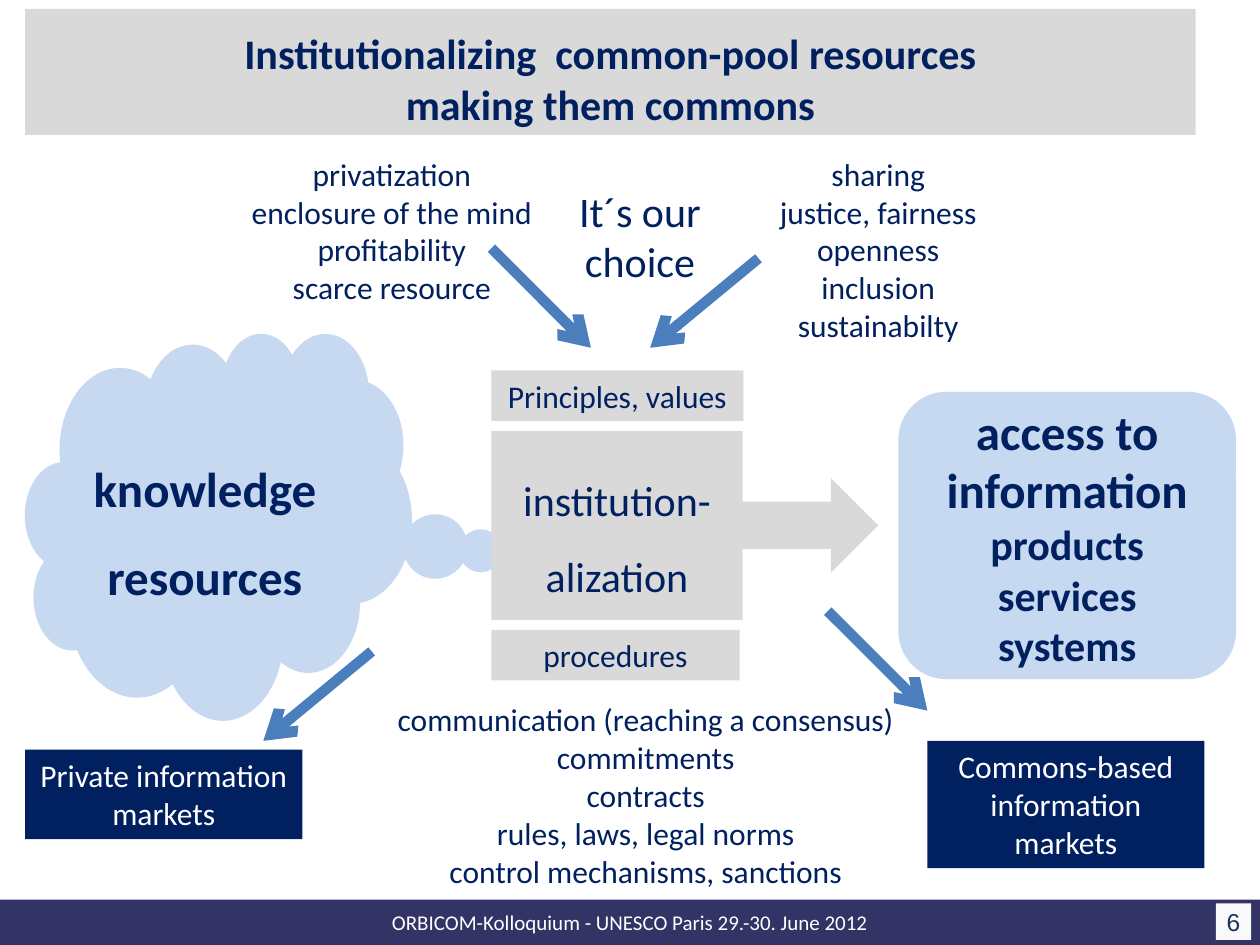
from dataclasses import dataclass
from lxml.etree import SubElement
from pptx import Presentation
from pptx.dml.color import RGBColor
from pptx.enum.shapes import MSO_CONNECTOR, MSO_SHAPE
from pptx.enum.text import MSO_ANCHOR, MSO_AUTO_SIZE, PP_ALIGN
from pptx.oxml.ns import qn
from pptx.util import Pt

PX = 9144
NAVY = RGBColor(0x00, 0x20, 0x60)
BLUE = RGBColor(0x4B, 0x7E, 0xBC)
PALE = RGBColor(0xC6, 0xD9, 0xF1)
GREY = RGBColor(0xD9, 0xD9, 0xD9)
WHITE = RGBColor(0xFF, 0xFF, 0xFF)
PAPER = RGBColor(0xF9, 0xF9, 0xF9)
BAR = RGBColor(0x33, 0x33, 0x66)
SLATE = RGBColor(0x17, 0x37, 0x5E)

RECT = MSO_SHAPE.RECTANGLE
TOP, MID, LOW = MSO_ANCHOR.TOP, MSO_ANCHOR.MIDDLE, MSO_ANCHOR.BOTTOM


@dataclass(frozen=True)
class Run:
    text: str
    size: int = 18
    bold: bool = False
    color: RGBColor = NAVY
    font: str = "Calibri"


@dataclass(frozen=True)
class Box:
    area: tuple[int, int, int, int]
    lines: list[list[Run]]
    fill: RGBColor | None = None
    kind: MSO_SHAPE = RECT
    anchor: MSO_ANCHOR = TOP
    space: float = 1.0
    wrap: bool = True
    adjust: tuple[float, ...] = ()


@dataclass(frozen=True)
class Arrow:
    start: tuple[int, int]
    end: tuple[int, int]


def scale(*sizes: int) -> list[int]:
    return [size * PX for size in sizes]


def rows(*texts: str, **style) -> list[list[Run]]:
    return [[Run(text, **style)] for text in texts]


def write(shape, box: Box) -> None:
    frame = shape.text_frame
    frame.auto_size = MSO_AUTO_SIZE.NONE
    frame.word_wrap = box.wrap
    frame.vertical_anchor = box.anchor
    for i, line in enumerate(box.lines):
        para = frame.add_paragraph() if i else frame.paragraphs[0]
        para.alignment = PP_ALIGN.CENTER
        para.line_spacing = box.space
        for item in line:
            for j, part in enumerate(item.text.split("\n")):
                if j:
                    para.add_line_break()
                run = para.add_run()
                run.text = part
                font = run.font
                font.name, font.size, font.bold = item.font, Pt(item.size), item.bold
                font.color.rgb = item.color


def paint(shape, color: RGBColor) -> None:
    shape.fill.solid()
    shape.fill.fore_color.rgb = color
    shape.line.fill.background()


def draw_title(slide, box: Box) -> None:
    title = slide.shapes.title
    title.left, title.top, title.width, title.height = scale(*box.area)
    paint(title, box.fill)
    write(title, box)


def draw_box(slide, box: Box) -> None:
    if box.fill is None:
        shape = slide.shapes.add_textbox(*scale(*box.area))
    else:
        shape = slide.shapes.add_shape(box.kind, *scale(*box.area))
        shape.shadow.inherit = False
        paint(shape, box.fill)
        for i, value in enumerate(box.adjust):
            shape.adjustments[i] = value
    write(shape, box)


def draw_arrow(slide, arrow: Arrow) -> None:
    line = slide.shapes.add_connector(
        MSO_CONNECTOR.STRAIGHT, *scale(*arrow.start, *arrow.end))
    line.line.color.rgb = BLUE
    line.line.width = Pt(6)
    SubElement(line.line._get_or_add_ln(), qn("a:tailEnd"), type="arrow")
    SubElement(line._element.spPr, qn("a:effectLst"))


TITLE = Box((20, 7, 929, 100),
            rows("Institutionalizing  common-pool resources\nmaking them commons",
                 size=24, bold=True), GREY, anchor=LOW)

BOXES = [
    Box((0, 714, 1000, 36),
        rows("ORBICOM-Kolloquium - UNESCO Paris 29.-30. June 2012",
             size=12, color=WHITE), BAR, anchor=MID),
    Box((965, 717, 28, 29), rows("6", size=14, color=SLATE, font="Arial"),
        PAPER, anchor=MID, wrap=False),
    Box((20, 264, 307, 307), rows("knowledge resources", size=28, bold=True),
        PALE, MSO_SHAPE.CLOUD_CALLOUT, MID, 1.5, adjust=(0.74, 0.07)),
    Box((390, 342, 307, 150), rows("institution-alization", size=24),
        GREY, MSO_SHAPE.RIGHT_ARROW_CALLOUT, MID, 1.5),
    Box((713, 311, 268, 228),
        [[Run("access to information", 28, True), Run(" products", 24, True)],
         *rows("services", "systems", size=24, bold=True)],
        PALE, MSO_SHAPE.ROUNDED_RECTANGLE, MID),
    Box((390, 294, 200, 40), rows("Principles, values"), GREY),
    Box((390, 500, 197, 40), rows("procedures"), GREY),
    Box((563, 118, 268, 162),
        rows("sharing", "justice, fairness", "openness", "inclusion", "sustainabilty")),
    Box((177, 118, 268, 131),
        rows("privatization", "enclosure of the mind", "profitability",
             "scarce resource")),
    Box((445, 142, 126, 91), rows("It´s our choice", size=24)),
    Box((280, 551, 465, 162),
        rows("communication (reaching a consensus)", "commitments", "contracts",
             "rules, laws, legal norms", "control mechanisms, sanctions")),
    Box((20, 595, 220, 71), rows("Private information markets", color=WHITE), NAVY),
    Box((736, 588, 220, 101),
        rows("Commons-based information markets", color=WHITE), NAVY),
]

ARROWS = [
    Arrow((602, 205), (516, 276)),
    Arrow((390, 197), (469, 276)),
    Arrow((295, 517), (209, 588)),
    Arrow((657, 485), (736, 564)),
]


def main() -> None:
    deck = Presentation()
    deck.slide_width, deck.slide_height = scale(1000, 750)
    slide = deck.slides.add_slide(deck.slide_layouts[5])
    draw_title(slide, TITLE)
    for box in BOXES:
        draw_box(slide, box)
    for arrow in ARROWS:
        draw_arrow(slide, arrow)
    deck.save("out.pptx")


if __name__ == "__main__":
    main()
